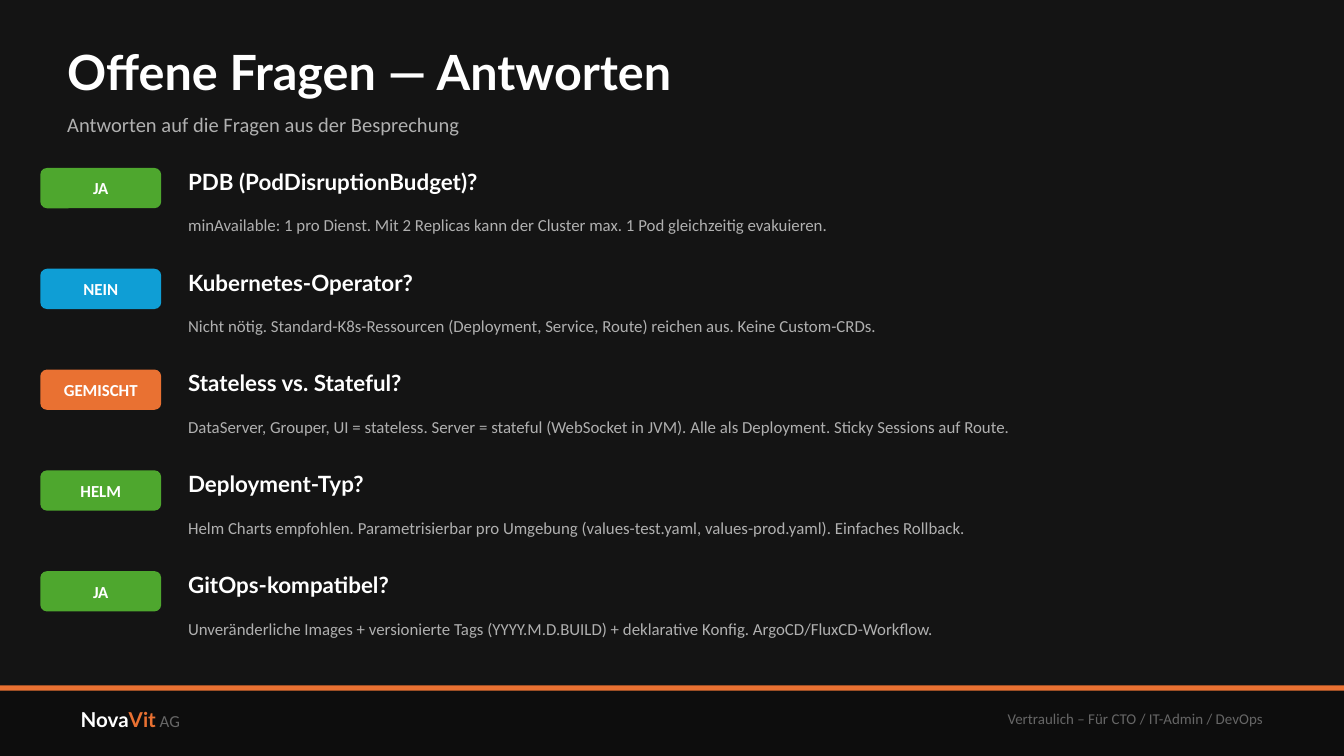
from pptx import Presentation
from pptx.dml.color import RGBColor
from pptx.enum.shapes import MSO_SHAPE as Preset
from pptx.enum.text import MSO_ANCHOR as Anchor, PP_ALIGN as Align
from pptx.util import Pt

EMU_PER_PX = 4572  # 200 px to the inch
SLIDE_WIDTH, SLIDE_HEIGHT = 2000, 1125

BACKGROUND, FOOTER = "141414", "0D0D0D"
WHITE, GREY, DARK_GREY = "FFFFFF", "B0B0B0", "666666"
GREEN, BLUE, ORANGE = "4EA72E", "0F9ED5", "E97132"
HEADING_FONT, BODY_FONT = "Lato", "Calibri"

ANSWERS = [
    ("JA", GREEN, "PDB (PodDisruptionBudget)?",
     "minAvailable: 1 pro Dienst. Mit 2 Replicas kann der Cluster max. 1 Pod "
     "gleichzeitig evakuieren."),
    ("NEIN", BLUE, "Kubernetes-Operator?",
     "Nicht nötig. Standard-K8s-Ressourcen (Deployment, Service, Route) reichen aus. "
     "Keine Custom-CRDs."),
    ("GEMISCHT", ORANGE, "Stateless vs. Stateful?",
     "DataServer, Grouper, UI = stateless. Server = stateful (WebSocket in JVM). "
     "Alle als Deployment. Sticky Sessions auf Route."),
    ("HELM", GREEN, "Deployment-Typ?",
     "Helm Charts empfohlen. Parametrisierbar pro Umgebung (values-test.yaml, "
     "values-prod.yaml). Einfaches Rollback."),
    ("JA", GREEN, "GitOps-kompatibel?",
     "Unveränderliche Images + versionierte Tags (YYYY.M.D.BUILD) + deklarative Konfig. "
     "ArgoCD/FluxCD-Workflow."),
]


def px(length):
    return round(length * EMU_PER_PX)


def set_fill(fill, color):
    fill.solid()
    fill.fore_color.rgb = RGBColor.from_string(color)


def add_box(slide, preset, left, top, width, height, color):
    shape = slide.shapes.add_shape(preset, px(left), px(top), px(width), px(height))
    shape.shadow.inherit = False
    set_fill(shape.fill, color)
    shape.line.fill.background()
    return shape


def add_run(paragraph, text, *, size, color, font=BODY_FONT, bold=False):
    run = paragraph.add_run()
    run.text = text
    run.font.name, run.font.size, run.font.bold = font, Pt(size), bold
    run.font.color.rgb = RGBColor.from_string(color)


def prepare_frame(shape, align):
    """Centre the text vertically without margins and return the first paragraph."""
    frame = shape.text_frame
    frame.word_wrap = True
    frame.vertical_anchor = Anchor.MIDDLE
    frame.margin_left = frame.margin_right = frame.margin_top = frame.margin_bottom = 0
    paragraph = frame.paragraphs[0]
    paragraph.alignment = align
    return paragraph


def add_text(slide, left, top, width, height, *runs, align=Align.LEFT, **style):
    """Add a text box; each run is a text and its own format on top of the style."""
    box = slide.shapes.add_textbox(px(left), px(top), px(width), px(height))
    paragraph = prepare_frame(box, align)
    for text, extra in runs:
        add_run(paragraph, text, **{**style, **extra})


def add_header(slide, left, top, width):
    add_text(slide, left, top, width, 110, ("Offene Fragen — Antworten", {}),
             size=26, color=WHITE, font=HEADING_FONT, bold=True)
    add_text(slide, left, top + 100, width, 70,
             ("Antworten auf die Fragen aus der Besprechung", {}), size=11, color=GREY)


def add_answer(slide, left, top, width, badge, color, question, answer):
    pill = add_box(slide, Preset.ROUNDED_RECTANGLE, left, top + 10, 180, 60, color)
    add_run(prepare_frame(pill, Align.CENTER), badge, size=9, color=WHITE, bold=True)
    indent = 220
    add_text(slide, left + indent, top, width - indent, 60, (question, {}),
             size=12, color=WHITE, font=HEADING_FONT, bold=True)
    add_text(slide, left + indent, top + 60, width - indent, 70, (answer, {}),
             size=9, color=GREY)


def add_footer(slide, left, top, width, height):
    add_box(slide, Preset.RECTANGLE, left, top, width, height, FOOTER)
    add_box(slide, Preset.RECTANGLE, left, top, width, 8, ORANGE)
    margin = 120
    add_text(slide, left + margin, top + 10, 560, 80,
             ("Nova", {}), ("Vit", {"color": ORANGE}),
             (" AG", {"size": 9, "color": DARK_GREY, "font": BODY_FONT, "bold": False}),
             size=11, color=WHITE, font=HEADING_FONT, bold=True)
    add_text(slide, left + width - margin - 760, top + 10, 760, 80,
             ("Vertraulich – Für CTO / IT-Admin / DevOps", {}),
             align=Align.RIGHT, size=8, color=DARK_GREY)


def main():
    presentation = Presentation()
    presentation.slide_width = px(SLIDE_WIDTH)
    presentation.slide_height = px(SLIDE_HEIGHT)
    slide = presentation.slides.add_slide(presentation.slide_layouts[6])
    set_fill(slide.background.fill, BACKGROUND)

    add_footer(slide, 0, 1020, SLIDE_WIDTH, SLIDE_HEIGHT - 1020)
    add_header(slide, 100, 50, 1800)
    for row, answer in enumerate(ANSWERS):
        add_answer(slide, 60, 240 + row * 150, 1880, *answer)

    presentation.save("out.pptx")


if __name__ == "__main__":
    main()
